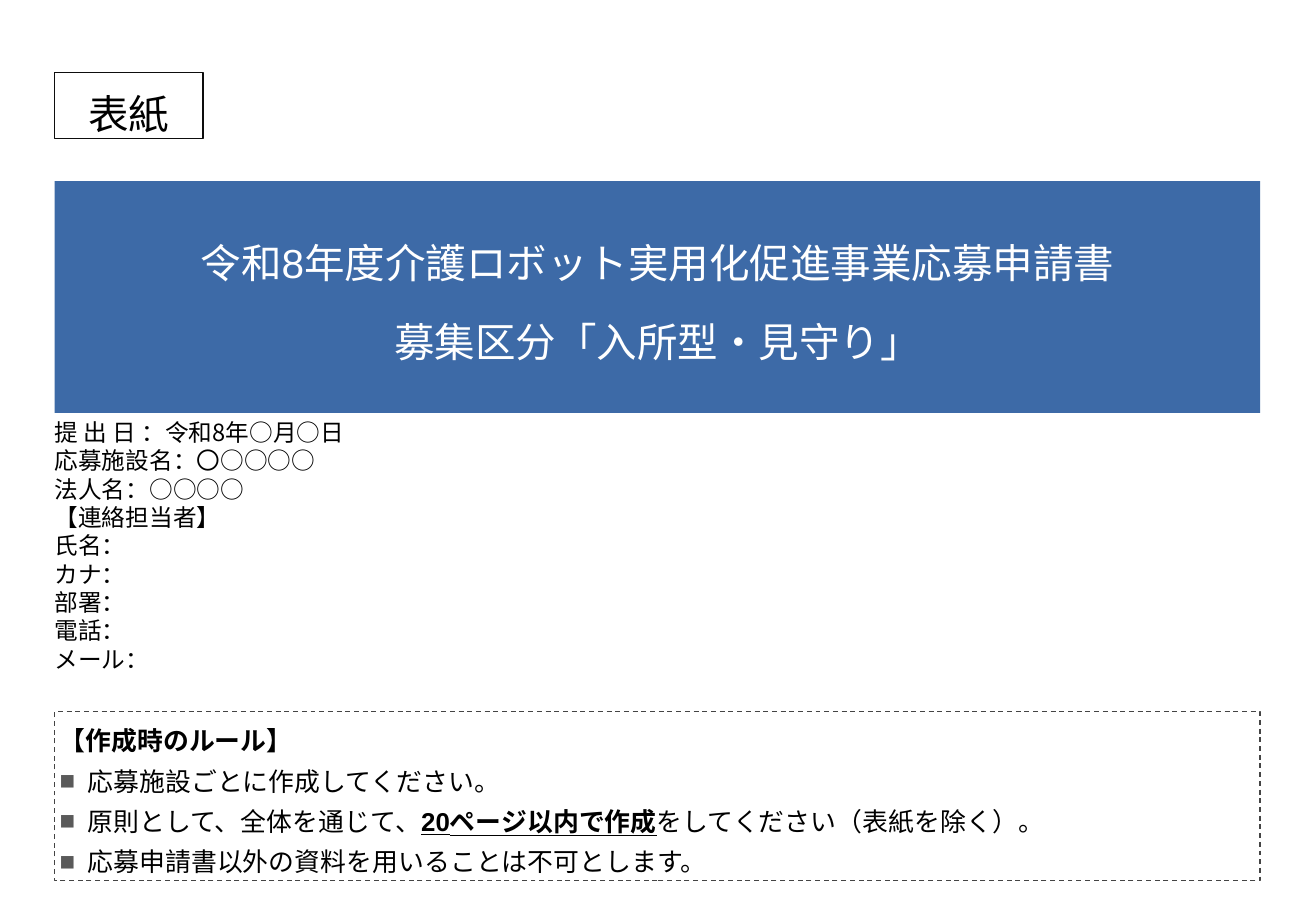
from pptx import Presentation, util as u
from pptx.dml.color import RGBColor
from pptx.enum import dml, shapes, text
from pptx.oxml.ns import qn
from lxml import etree

HUE = {"ink": "000000", "edge": "0D0D0D", "dash": "444444",
       "band": "3D6AA7", "mark": "5A5A5A", "white": "FFFFFF"}
CJK = "Noto Sans CJK JP"
LEFT, WIDE = 0.45, 9.92


class Cover:
    """Holds the style and the current slide, and draws its elements."""

    def __init__(self, deck):
        self.slide = deck.slides.add_slide(deck.slide_layouts[6])

    def hue(self, name):
        return RGBColor.from_string(HUE[name])

    def frame(self, shape, pads, mid=False, wrap=True):
        body = shape.text_frame
        body.word_wrap = wrap
        body.margin_left, body.margin_top, body.margin_right, body.margin_bottom = map(u.Inches, pads)
        body.vertical_anchor = text.MSO_ANCHOR.MIDDLE if mid else text.MSO_ANCHOR.TOP
        return body

    def label(self, spot, pads):
        return self.frame(self.slide.shapes.add_textbox(*map(u.Inches, spot)), pads)

    def box(self, spot, pads, fill=None, line=None, dash=False, mid=False, wrap=True):
        shape = self.slide.shapes.add_shape(shapes.MSO_SHAPE.RECTANGLE, *map(u.Inches, spot))
        shape.shadow.inherit = False
        if fill:
            shape.fill.solid()
            shape.fill.fore_color.rgb = self.hue(fill)
        else:
            shape.fill.background()
        if line:
            shape.line.color.rgb = self.hue(line)
            shape.line.width = u.Pt(0.75)
            if dash:
                shape.line.dash_style = dml.MSO_LINE.DASH
        else:
            shape.line.fill.background()
        return self.frame(shape, pads, mid, wrap)

    def lines(self, body, rows, size, font="Arial", ink="ink", gap=1.0,
              before=0, center=False, hang=0, mark=False):
        for n, runs in enumerate(rows):
            para = body.paragraphs[0] if n == 0 else body.add_paragraph()
            para.alignment = text.PP_ALIGN.CENTER if center else text.PP_ALIGN.LEFT
            para.line_spacing = gap
            if n and before:
                para.space_before = u.Pt(before)
            if hang and (n or not mark):
                self.indent(para, hang, mark)
            for words, strong, under in runs:
                run = para.add_run()
                run.text = words
                face = run.font
                face.size, face.name = u.Pt(size), font
                face.bold, face.underline = strong, under
                face.color.rgb = self.hue(ink)
                etree.SubElement(run._r.get_or_add_rPr(), qn("a:ea"), typeface=CJK)

    def indent(self, para, hang, mark):
        props = para._p.get_or_add_pPr()
        props.set("marL", str(u.Inches(hang)))
        props.set("indent", str(-u.Inches(hang)))
        if mark:
            tint = etree.SubElement(props, qn("a:buClr"))
            etree.SubElement(tint, qn("a:srgbClr"), val=HUE["mark"])
            etree.SubElement(props, qn("a:buFont"), typeface="Arial")
            etree.SubElement(props, qn("a:buChar"), char="■")


def plain(*lines):
    return [[(line, False, False)] for line in lines]


def main():
    deck = Presentation()
    deck.slide_width, deck.slide_height = u.Inches(10.83), u.Inches(7.5)
    cover = Cover(deck)

    facts = cover.label((LEFT, 3.4, WIDE, 2.21), (0, 0.04, 0, 0.05))
    cover.lines(facts, plain(
        "提 出 日 ：令和8年○月○日", "応募施設名：〇○○○○", "法人名：○○○○",
        "【連絡担当者】", "氏名：", "カナ：", "部署：", "電話：", "メール："),
        14, font=CJK, hang=0.29)

    rules = cover.box((LEFT, 5.86, WIDE, 1.39), [0.04] * 4, line="dash", dash=True, mid=True)
    cover.lines(rules, [
        [("【作成時のルール】", True, False)],
        *plain("応募施設ごとに作成してください。"),
        [("原則として、全体を通じて、", False, False),
         ("20ページ以内で作成", True, True),
         ("をしてください（表紙を除く）。", False, False)],
        *plain("応募申請書以外の資料を用いることは不可とします。")],
        15.3, gap=1.3, hang=0.23, mark=True)

    tag = cover.box((LEFT, 0.6, 1.22, 0.54), (0.1, 0.05, 0.1, 0.05), line="edge")
    cover.lines(tag, plain("表紙"), 24, gap=1.2, center=True)

    title = cover.box((LEFT, 1.49, WIDE, 1.91), [0.02] * 4, fill="band", mid=True, wrap=False)
    cover.lines(title, plain("令和8年度介護ロボット実用化促進事業応募申請書",
                             "募集区分「入所型・見守り」"),
                24, ink="white", gap=1.2, before=12, center=True)

    deck.save("out.pptx")


if __name__ == "__main__":
    main()
